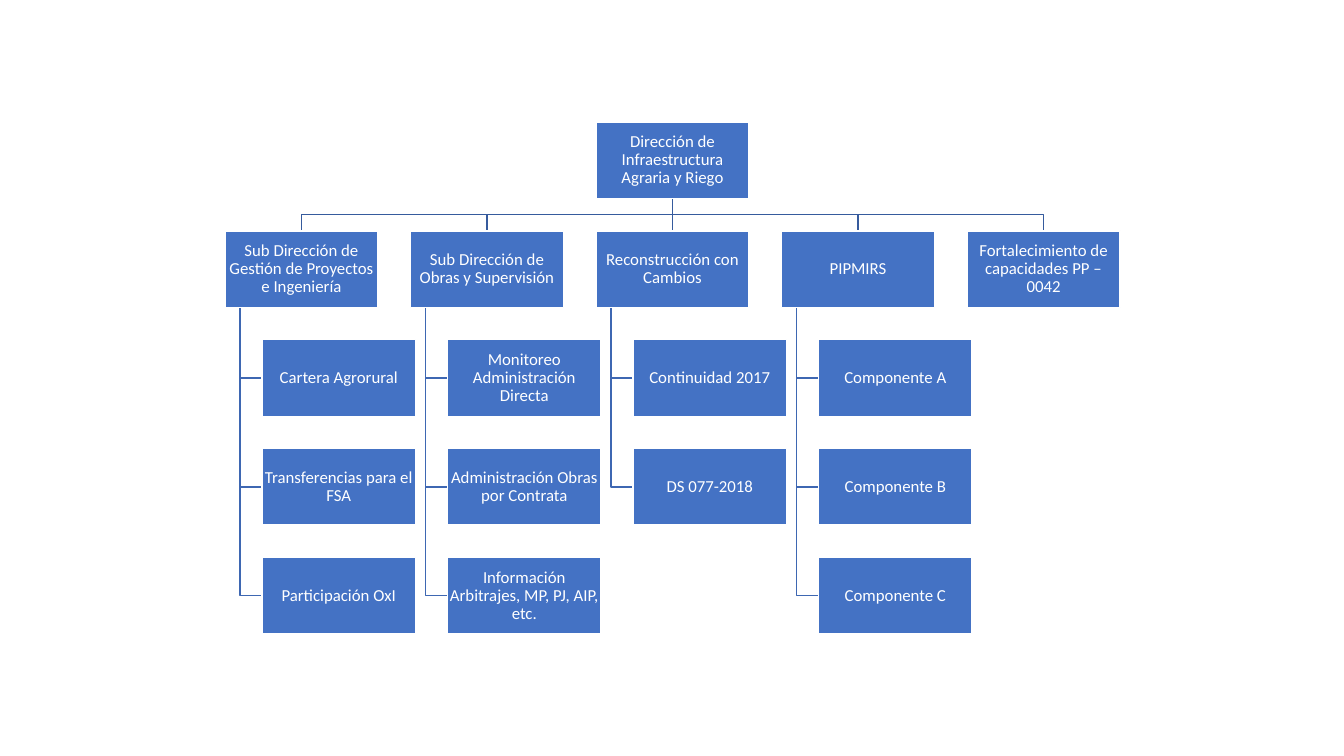
from lxml import etree
from pptx import Presentation
from pptx.dml.color import RGBColor
from pptx.enum.shapes import MSO_CONNECTOR as CONNECTOR, MSO_SHAPE as SHAPE
from pptx.enum.text import MSO_ANCHOR as ANCHOR, PP_ALIGN as ALIGN
from pptx.oxml.ns import qn
from pptx.util import Pt

DIRECTION = "Dirección de Infraestructura Agraria y Riego"
UNITS = [
    ("Sub Dirección de Gestión de Proyectos e Ingeniería",
     ["Cartera Agrorural", "Transferencias para el FSA", "Participación OxI"]),
    ("Sub Dirección de Obras y Supervisión",
     ["Monitoreo Administración Directa", "Administración Obras por Contrata",
      "Información Arbitrajes, MP, PJ, AIP, etc."]),
    ("Reconstrucción con Cambios", ["Continuidad 2017", "DS 077-2018"]),
    ("PIPMIRS", ["Componente A", "Componente B", "Componente C"]),
    ("Fortalecimiento de capacidades PP – 0042", []),
]

BLUE = RGBColor(0x44, 0x72, 0xC4)
BRANCH_BLUE = RGBColor(0x36, 0x5B, 0x9D)
STEM_BLUE = RGBColor(0x3E, 0x67, 0xB2)
WHITE = RGBColor(0xFF, 0xFF, 0xFF)

PX = 9144  # EMU, 100 px to the inch
SLIDE_W, SLIDE_H = 1333, 750
BOX_W, BOX_H = 152, 76
LEFT, TOP = 223, 121
COL_STEP, ROW_STEP = 184, 108
CHILD_INDENT, STEM_INDENT = 37, 15
MIDDLE = len(UNITS) // 2


def col_x(col):
    return LEFT + col * COL_STEP


def row_y(row):
    return TOP + row * ROW_STEP


def style_line(s, color):
    s.line.color.rgb = color
    s.line.width = Pt(1)


def add_elbow(shapes, points, color):
    """Draw an open line through points given in px."""
    builder = shapes.build_freeform(*points[0], scale=PX)
    builder.add_line_segments(points[1:], close=False)
    s = builder.convert_to_shape()
    s.shadow.inherit = False
    s.fill.background()
    style_line(s, color)


def add_box(shapes, text, x, y):
    s = shapes.add_shape(SHAPE.RECTANGLE, x * PX, y * PX, BOX_W * PX, BOX_H * PX)
    s.shadow.inherit = False
    s.fill.solid()
    s.fill.fore_color.rgb = BLUE
    style_line(s, WHITE)
    tf = s.text_frame
    tf.word_wrap = True
    tf.vertical_anchor = ANCHOR.MIDDLE
    tf.margin_left = tf.margin_right = tf.margin_top = tf.margin_bottom = PX
    p = tf.paragraphs[0]
    p.text = text
    p.alignment = ALIGN.CENTER
    p.line_spacing = 0.9
    p.font.name = "Calibri"
    p.font.size = Pt(12)
    p.font.color.rgb = WHITE
    return s


def main():
    prs = Presentation()
    prs.slide_width, prs.slide_height = SLIDE_W * PX, SLIDE_H * PX
    shapes = prs.slides.add_slide(prs.slide_layouts[6]).shapes

    # Lines first, so that the boxes lie over their ends
    root_x = col_x(MIDDLE) + BOX_W // 2
    root_bottom, unit_top = row_y(0) + BOX_H, row_y(1)
    bus_y = (root_bottom + unit_top) // 2
    trunk = shapes.add_connector(CONNECTOR.STRAIGHT, root_x * PX, root_bottom * PX,
                                 root_x * PX, unit_top * PX)
    style_line(trunk, BRANCH_BLUE)
    etree.SubElement(trunk.element.spPr, qn("a:effectLst"))
    for col, (_, children) in enumerate(UNITS):
        unit_x = col_x(col) + BOX_W // 2
        if col != MIDDLE:
            add_elbow(shapes, [(root_x, root_bottom), (root_x, bus_y),
                               (unit_x, bus_y), (unit_x, unit_top)], BRANCH_BLUE)
        stem_x = col_x(col) + STEM_INDENT
        for row in range(2, 2 + len(children)):
            child_y = row_y(row) + BOX_H // 2
            add_elbow(shapes, [(stem_x, unit_top + BOX_H), (stem_x, child_y),
                               (col_x(col) + CHILD_INDENT, child_y)], STEM_BLUE)

    root = add_box(shapes, DIRECTION, col_x(MIDDLE), row_y(0))
    trunk.begin_connect(root, 2)
    for col, (unit, children) in enumerate(UNITS):
        s = add_box(shapes, unit, col_x(col), unit_top)
        if col == MIDDLE:
            trunk.end_connect(s, 0)
        for row, child in enumerate(children, 2):
            add_box(shapes, child, col_x(col) + CHILD_INDENT, row_y(row))

    prs.save("out.pptx")


if __name__ == "__main__":
    main()
